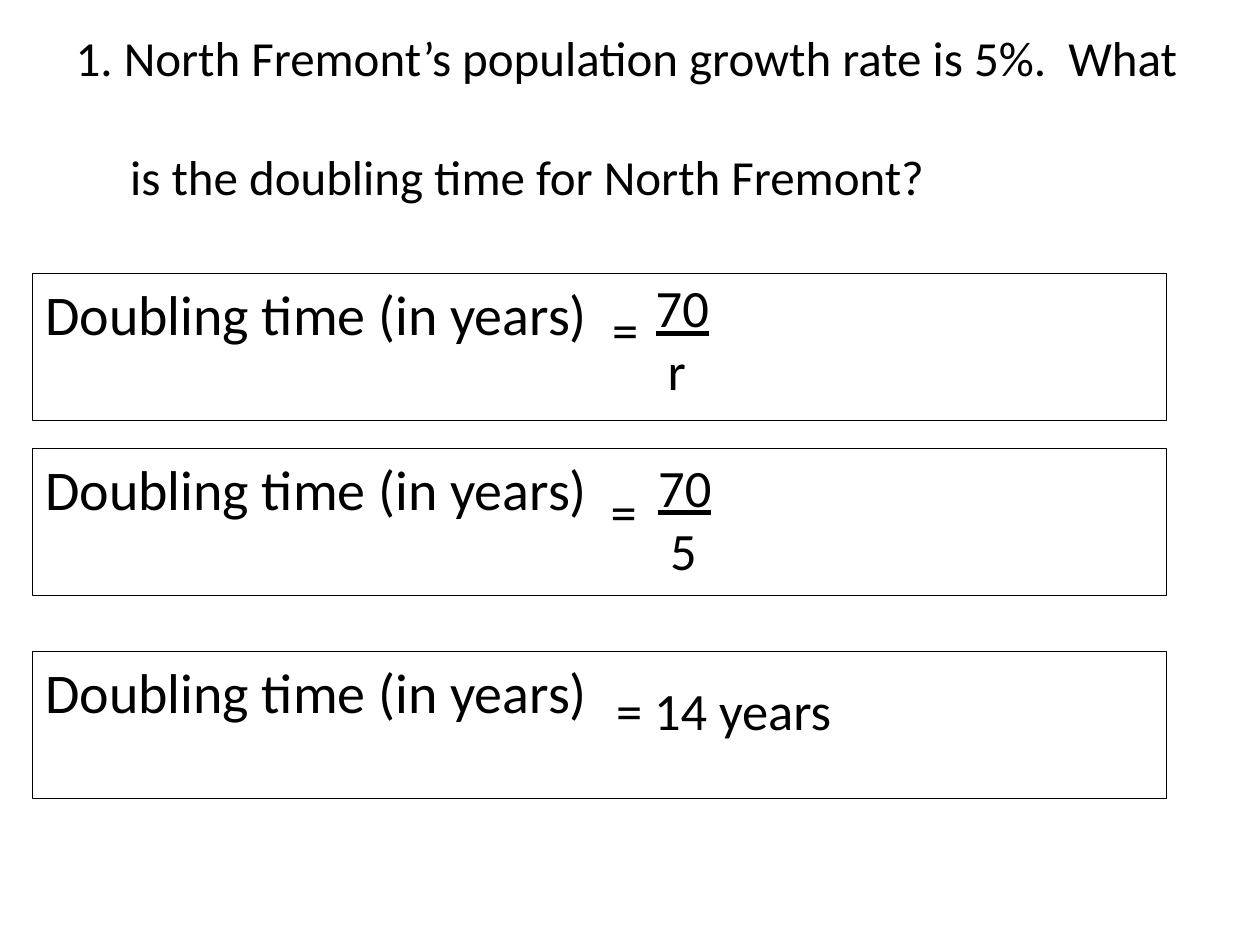
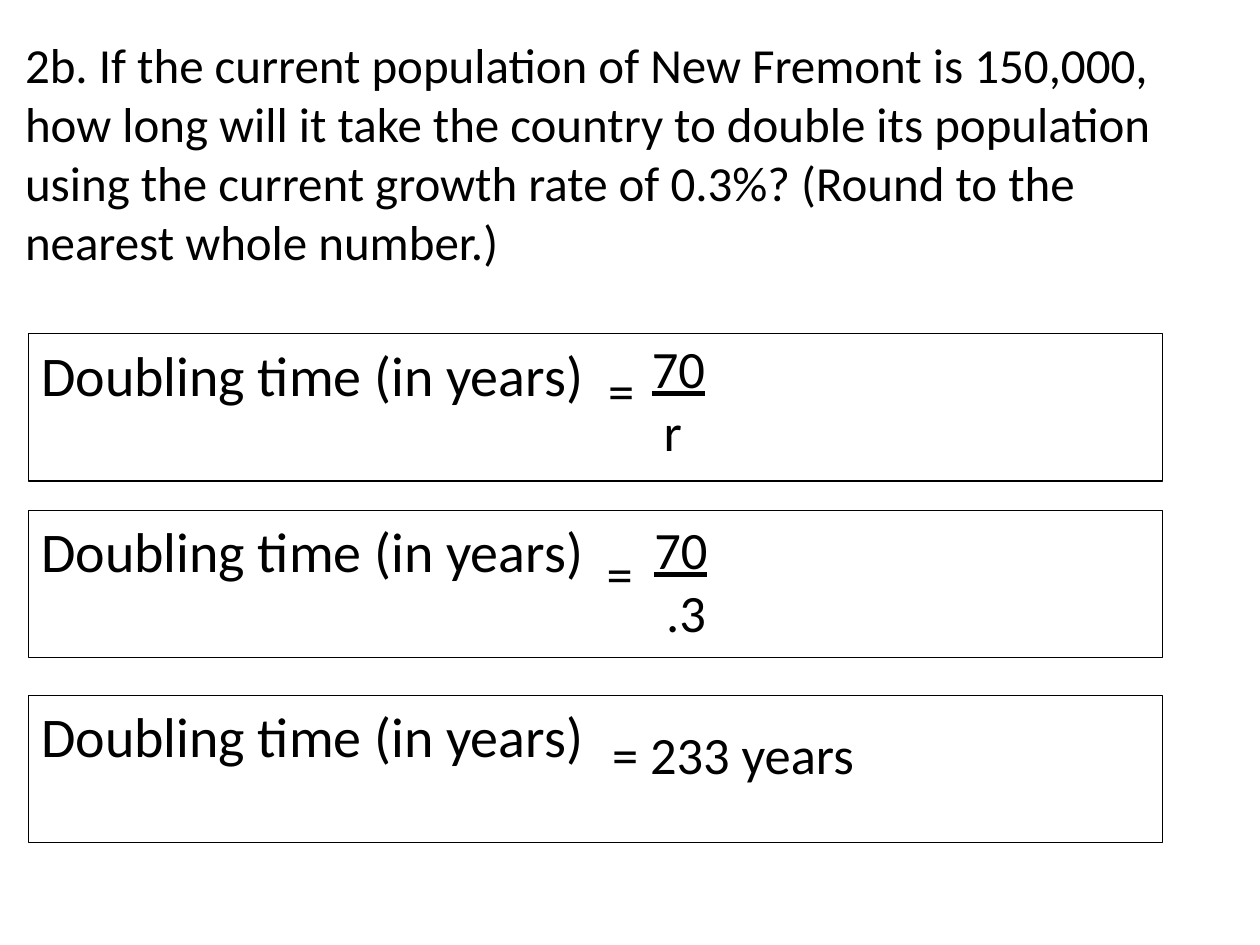
from pptx import Presentation
from pptx.dml.color import RGBColor
from pptx.enum.shapes import MSO_SHAPE
from pptx.enum.text import MSO_ANCHOR, MSO_AUTO_SIZE, PP_ALIGN
from pptx.util import Cm, Pt

RECTANGLE = MSO_SHAPE.RECTANGLE
TOP, MIDDLE = MSO_ANCHOR.TOP, MSO_ANCHOR.MIDDLE
FIXED, GROW = MSO_AUTO_SIZE.NONE, MSO_AUTO_SIZE.SHAPE_TO_FIT_TEXT
LEFT = PP_ALIGN.LEFT

COLORS = {"text": "000000", "line": "000000"}
FONT = "Calibri"
LABEL = "Doubling time (in years)"

# Lengths are in centimetres; areas are left, top, width, height.
PROBLEMS = [
    {
        "question": ["1. North Fremont’s population growth rate is 5%.  What",
                     "is the doubling time for North Fremont?"],
        "title_area": (1.27, 0.76, 22.86, 3.18),
        "box_left": 0.66,
        "box_tops": (5.51, 9.04, 13.13),
        "divisors": ("r", "5"),
        "answer": "= 14 years",
    },
    {
        "question": ["2b. If the current population of New Fremont is 150,000, "
                     "how long will it take the country to double its population "
                     "using the current growth rate of 0.3%? "
                     "(Round to the nearest whole number.)"],
        "title_area": (0.25, 0.43, 24.77, 5.28),
        "box_left": 0.58,
        "box_tops": (6.73, 10.29, 14.02),
        "divisors": ("r", ".3"),
        "answer": "= 233 years",
    },
]

BOX_SIZE = (22.86, 2.97)
FRACTION_SIZE = (2.97, 2.82)
EQUALS_SIZE = (1.07, 1.55)
ANSWER_SIZE = (7.72, 1.55)
# Offsets from the corner of the box: fraction, then equals sign, for each row.
FRACTION_ROWS = [((11.35, -0.08), (11.43, 0.36)),
                 ((11.4, 0), (11.4, 0.5))]
ANSWER_OFFSET = (11.51, 0.41)
NUMERATOR_INDENT, DIVISOR_INDENT = 0.96, 1.2
QUESTION_INDENT, QUESTION_GAP = 1.1, 34


def write(frame, text, size, new=False, indent=0, before=0, underline=False):
    """Write one paragraph, as the first of the frame or as a new one."""
    paragraph = frame.add_paragraph() if new else frame.paragraphs[0]
    paragraph.alignment = LEFT
    paragraph.space_before = Pt(before)
    if indent:
        properties = paragraph._p.get_or_add_pPr()
        properties.set("marL", str(Cm(indent)))
        properties.set("indent", "0")
    run = paragraph.add_run()
    run.text = text
    run.font.name = FONT
    run.font.size = Pt(size)
    run.font.underline = underline
    run.font.color.rgb = RGBColor.from_string(COLORS["text"])


def add_label_box(group, corner):
    box = group.shapes.add_shape(RECTANGLE, *map(Cm, corner + BOX_SIZE))
    box.shadow.inherit = False
    box.fill.background()
    box.line.color.rgb = RGBColor.from_string(COLORS["line"])
    box.line.width = Pt(0.75)
    box.text_frame.vertical_anchor = TOP
    write(box.text_frame, LABEL, 32)


def add_text_frame(group, corner, offset, size):
    place = tuple(start + shift for start, shift in zip(corner, offset))
    frame = group.shapes.add_textbox(*map(Cm, place + size)).text_frame
    frame.word_wrap = True
    frame.auto_size = GROW
    return frame


def add_fraction(group, corner, divisor, fraction_offset, equals_offset):
    fraction = add_text_frame(group, corner, fraction_offset, FRACTION_SIZE)
    write(fraction, "70", 30, indent=NUMERATOR_INDENT, underline=True)
    write(fraction, divisor, 30, new=True, indent=DIVISOR_INDENT)
    write(add_text_frame(group, corner, equals_offset, EQUALS_SIZE), "=", 30)


def add_question(slide, lines, area):
    title = slide.shapes.title
    title.left, title.top, title.width, title.height = map(Cm, area)
    frame = title.text_frame
    frame.word_wrap = True
    frame.auto_size = FIXED
    frame.vertical_anchor = MIDDLE
    write(frame, lines[0], 28)
    for line in lines[1:]:
        write(frame, line, 28, new=True, indent=QUESTION_INDENT, before=QUESTION_GAP)


def add_problem(presentation, problem):
    slide = presentation.slides.add_slide(presentation.slide_layouts[5])
    add_question(slide, problem["question"], problem["title_area"])
    for row, top in enumerate(problem["box_tops"]):
        group = slide.shapes.add_group_shape()
        corner = (problem["box_left"], top)
        add_label_box(group, corner)
        if row < len(FRACTION_ROWS):
            add_fraction(group, corner, problem["divisors"][row], *FRACTION_ROWS[row])
        else:
            frame = add_text_frame(group, corner, ANSWER_OFFSET, ANSWER_SIZE)
            write(frame, problem["answer"], 30)


def main():
    presentation = Presentation()
    presentation.slide_width, presentation.slide_height = Cm(25.4), Cm(19.05)
    for problem in PROBLEMS:
        add_problem(presentation, problem)
    presentation.save("out.pptx")


if __name__ == "__main__":
    main()
